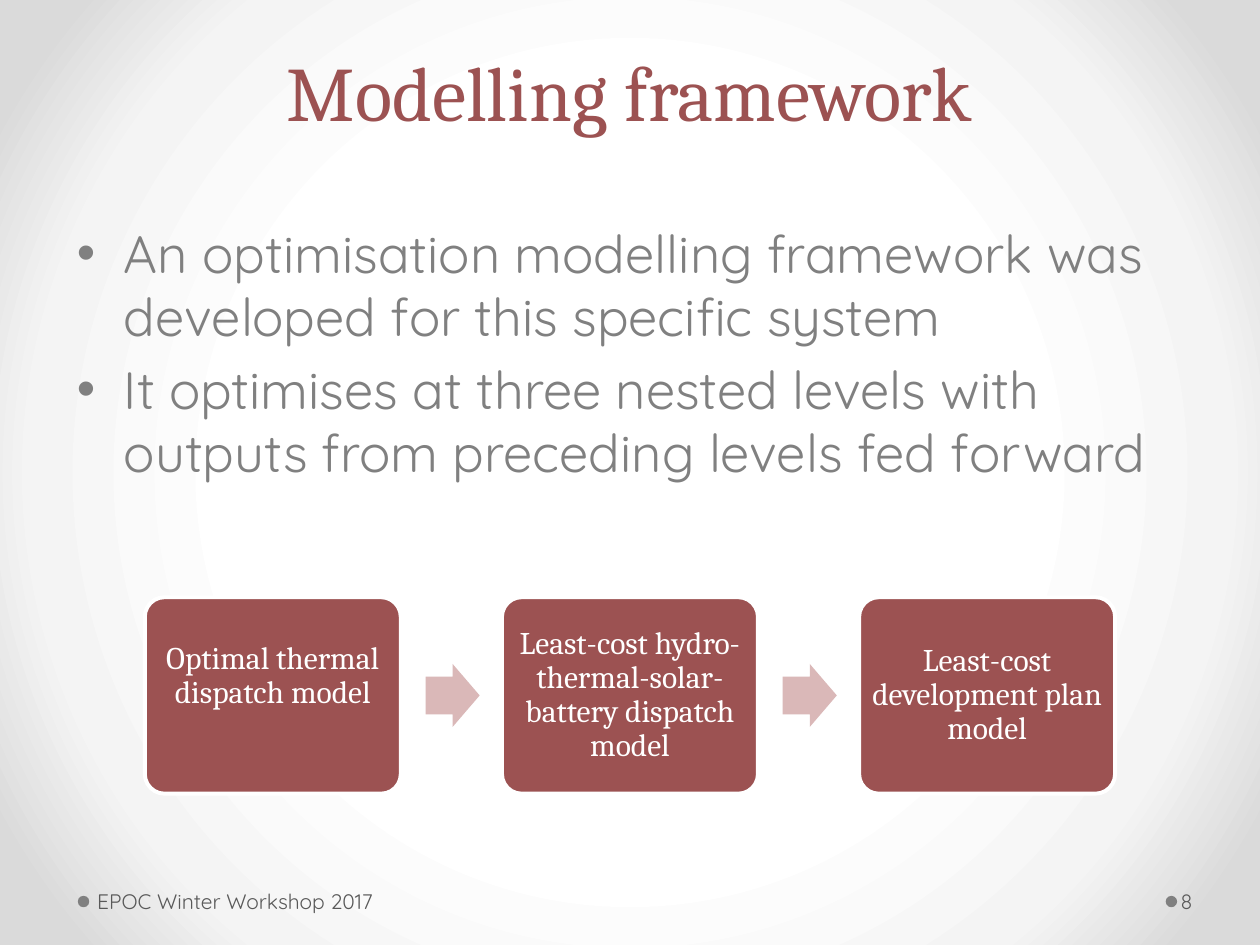
from pptx import Presentation
from pptx.dml.color import RGBColor
from pptx.enum.shapes import MSO_SHAPE
from pptx.enum.text import MSO_ANCHOR, PP_ALIGN
from pptx.oxml import parse_xml
from pptx.oxml.ns import nsdecls
from pptx.util import Cm, Pt

ROUNDED, ARROW, DOT = MSO_SHAPE.ROUNDED_RECTANGLE, MSO_SHAPE.RIGHT_ARROW, MSO_SHAPE.OVAL
TOP, MIDDLE, BOTTOM = MSO_ANCHOR.TOP, MSO_ANCHOR.MIDDLE, MSO_ANCHOR.BOTTOM
LEFT, CENTER = PP_ALIGN.LEFT, PP_ALIGN.CENTER

# Content
TITLE = "Modelling framework"
POINTS = [
    "An optimisation modelling framework was developed for this specific system",
    "It optimises at three nested levels with outputs from preceding levels fed forward",
]
# Model name and the extra space kept free below it (cm)
MODELS = [
    ("Optimal thermal dispatch model", 0.76),
    ("Least-cost hydro-thermal-solar-battery dispatch model", 0),
    ("Least-cost development plan model", 0),
]
# Footer text, dot left, text left, text width, left inset (cm)
FOOTERS = [
    ("EPOC Winter Workshop 2017", 1.57, 1.83, 7.9, 0.13),
    ("8", 23.5, 23.72, 1.55, 0.08),
]

# Style
SERIF, SANS = "Cambria", "Quicksand"
RED, PINK, WHITE, GREY, DARK = "9C5252", "DAB8B8", "FFFFFF", "808080", "595959"
BACKGROUND = [(50, "FFFFFF"), (76, "F4F4F4"), (92, "DADADA")]

# Process row (cm)
ROW_LEFT, ROW_TOP, STEP = 2.92, 12.04, 7.2
BOX_W, BOX_H = 5.16, 3.96
ARROW_W, ARROW_H, ARROW_GAP = 1.09, 1.27, 0.5


def color(value):
    return RGBColor.from_string(value)


def write(shape, lines, *, size, font, fill, align=LEFT, anchor=TOP,
          insets=(0.25, 0.13, 0.25, 0.13), spacing=None, before=0, bullet=None):
    frame = shape.text_frame
    frame.word_wrap = True
    frame.vertical_anchor = anchor
    (frame.margin_left, frame.margin_top,
     frame.margin_right, frame.margin_bottom) = map(Cm, insets)
    for i, line in enumerate(lines):
        paragraph = frame.paragraphs[0] if i == 0 else frame.add_paragraph()
        paragraph.alignment = align
        paragraph.line_spacing = spacing
        paragraph.space_before = Pt(before)
        run = paragraph.add_run()
        run.text = line
        run.font.size, run.font.name = Pt(size), font
        run.font.color.rgb = color(fill)
        if bullet:
            props = paragraph._p.get_or_add_pPr()
            props.set("marL", str(Cm(0.95)))
            props.set("indent", str(-Cm(0.95)))
            props.append(parse_xml(f'<a:buFont {nsdecls("a")} typeface="Arial"/>'))
            props.append(parse_xml(f'<a:buChar {nsdecls("a")} char="{bullet}"/>'))


def add_text(slide, box, lines, **style):
    write(slide.shapes.add_textbox(*map(Cm, box)), lines, **style)


def add_block(slide, kind, box, fill, adjustments=(), outline=None):
    block = slide.shapes.add_shape(kind, *map(Cm, box))
    block.shadow.inherit = False
    block.fill.solid()
    block.fill.fore_color.rgb = color(fill)
    for i, value in enumerate(adjustments):
        block.adjustments[i] = value
    if outline:
        block.line.color.rgb = color(outline)
        block.line.width = Pt(2.25)
    else:
        block.line.fill.background()
    return block


def add_background(slide, stops):
    stop_xml = "".join(
        f'<a:gs pos="{pos * 1000}"><a:srgbClr val="{value}"/></a:gs>' for pos, value in stops)
    slide._element.cSld.insert(0, parse_xml(
        f'<p:bg {nsdecls("p", "a")}><p:bgPr><a:gradFill rotWithShape="1">'
        f'<a:gsLst>{stop_xml}</a:gsLst><a:path path="circle">'
        '<a:fillToRect l="50000" t="50000" r="50000" b="50000"/></a:path>'
        '</a:gradFill><a:effectLst/></p:bgPr></p:bg>'))


def main():
    deck = Presentation()
    deck.slide_width, deck.slide_height = Cm(25.4), Cm(19.05)
    slide = deck.slides.add_slide(deck.slide_layouts[6])
    add_background(slide, BACKGROUND)

    # Title and bullet points
    add_text(slide, (1.27, 0, 22.86, 2.9), [TITLE], size=44, font=SERIF, fill=RED,
             align=CENTER, anchor=BOTTOM, spacing=Pt(58))
    add_text(slide, (1.3, 4.32, 22.86, 7), POINTS, size=30, font=SANS, fill=GREY,
             before=6, bullet="•")

    # Models with an arrow between neighbours
    for i, (model, space_below) in enumerate(MODELS):
        left = ROW_LEFT + i * STEP
        box = add_block(slide, ROUNDED, (left, ROW_TOP, BOX_W, BOX_H), RED, [0.1], WHITE)
        write(box, [model], size=18, font=SERIF, fill=WHITE, align=CENTER, anchor=MIDDLE,
              insets=(0.15, 0.15, 0.15, 0.15 + space_below), spacing=0.9)
        if i < len(MODELS) - 1:
            arrow_top = ROW_TOP + (BOX_H - ARROW_H) / 2
            add_block(slide, ARROW, (left + BOX_W + ARROW_GAP, arrow_top, ARROW_W, ARROW_H),
                      PINK, [0.6, 0.5])

    # Footer with its dots
    for label, dot_left, left, width, inset in FOOTERS:
        add_block(slide, DOT, (dot_left, 18.06, 0.23, 0.23), GREY)
        add_text(slide, (left, 17.65, width, 1.02), [label], size=12, font=SANS, fill=DARK,
                 anchor=MIDDLE, insets=(inset, 0.13, 0.13, 0.13))

    deck.save("out.pptx")


if __name__ == "__main__":
    main()
